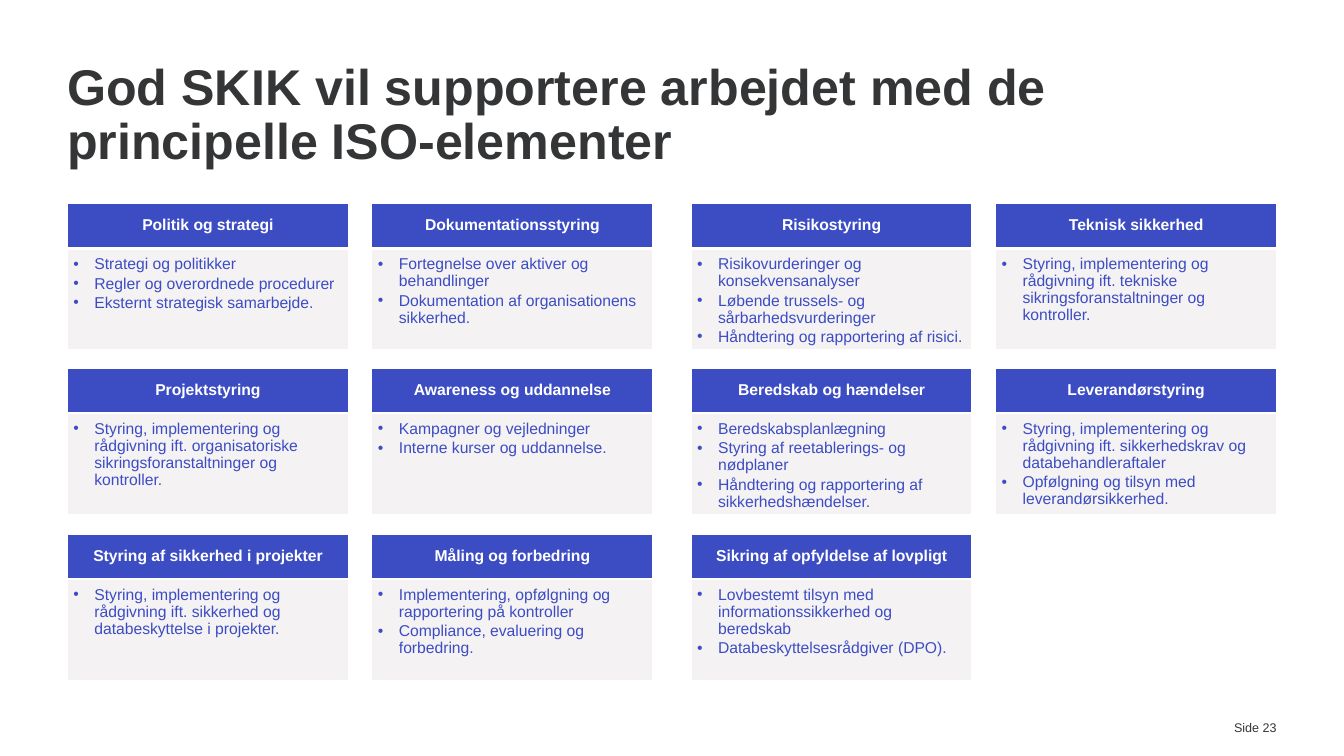
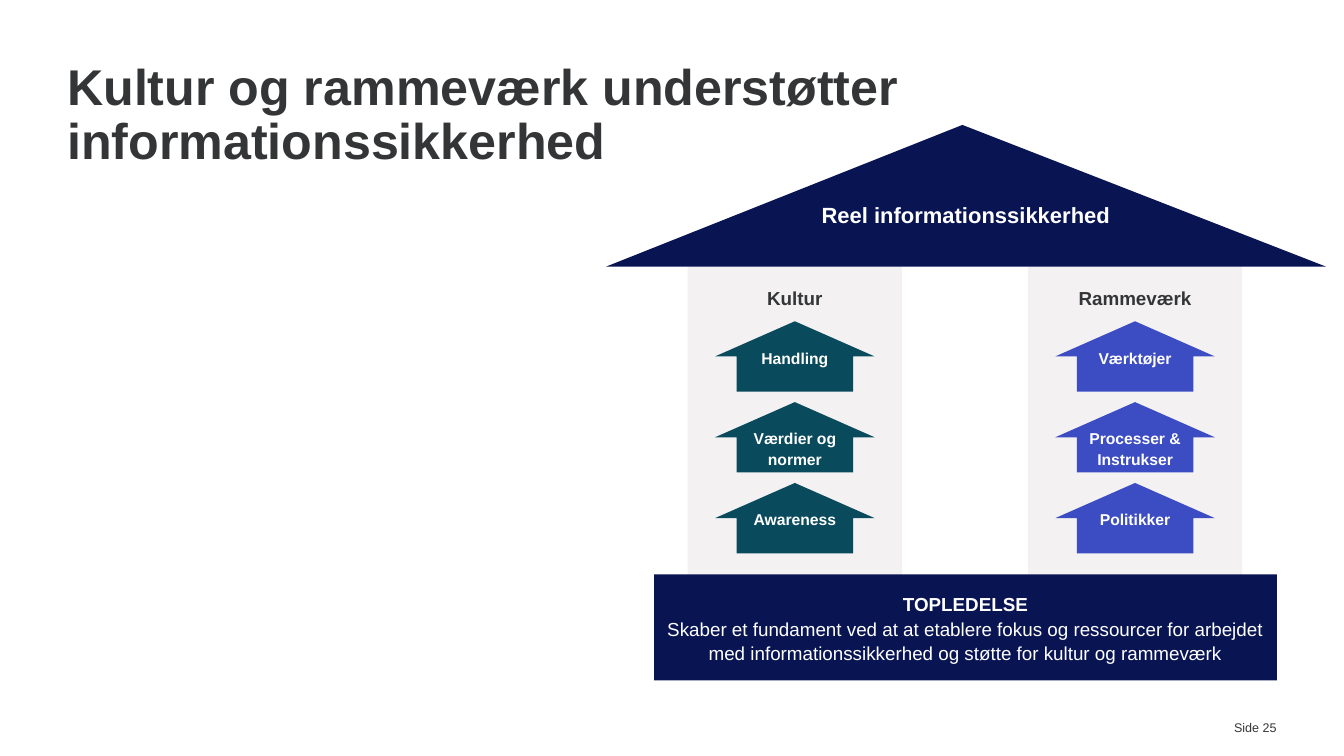
from lxml import etree
from pptx import Presentation
from pptx import util as u
from pptx.dml.color import RGBColor
from pptx.enum import shapes, text
from pptx.oxml import ns

PX = 8500
FONT = "Arial"
INK = RGBColor(0x34, 0x35, 0x36)
SLATE = RGBColor(0x33, 0x35, 0x37)
WHITE = RGBColor(0xFF, 0xFF, 0xFF)
BLUE = RGBColor(0x3C, 0x4D, 0xC4)
NAVY = RGBColor(0x09, 0x14, 0x53)
TEAL = RGBColor(0x09, 0x4A, 0x5C)
GREY = RGBColor(0xF3, 0xF1, 0xF2)

RECTANGLE = shapes.MSO_SHAPE.RECTANGLE
LEFT, CENTER, RIGHT = text.PP_ALIGN.LEFT, text.PP_ALIGN.CENTER, text.PP_ALIGN.RIGHT
TOP, MIDDLE = text.MSO_ANCHOR.TOP, text.MSO_ANCHOR.MIDDLE

TOPICS = [
    ("Politik og strategi", [
        "Strategi og politikker",
        "Regler og overordnede procedurer",
        "Eksternt strategisk samarbejde."]),
    ("Dokumentationsstyring", [
        "Fortegnelse over aktiver og behandlinger",
        "Dokumentation af organisationens sikkerhed."]),
    ("Risikostyring", [
        "Risikovurderinger og konsekvensanalyser",
        "Løbende trussels- og sårbarhedsvurderinger",
        "Håndtering og rapportering af risici."]),
    ("Teknisk sikkerhed", [
        "Styring, implementering og rådgivning ift. tekniske "
        "sikringsforanstaltninger og kontroller."]),
    ("Projektstyring", [
        "Styring, implementering og rådgivning ift. organisatoriske "
        "sikringsforanstaltninger og kontroller."]),
    ("Awareness og uddannelse", [
        "Kampagner og vejledninger",
        "Interne kurser og uddannelse."]),
    ("Beredskab og hændelser", [
        "Beredskabsplanlægning",
        "Styring af reetablerings- og nødplaner",
        "Håndtering og rapportering af sikkerhedshændelser."]),
    ("Leverandørstyring", [
        "Styring, implementering og rådgivning ift. sikkerhedskrav og databehandleraftaler",
        "Opfølgning og tilsyn med leverandørsikkerhed."]),
    ("Styring af sikkerhed i projekter", [
        "Styring, implementering og rådgivning ift. sikkerhed og "
        "databeskyttelse i projekter."]),
    ("Måling og forbedring", [
        "Implementering, opfølgning og rapportering på kontroller",
        "Compliance, evaluering og forbedring."]),
    ("Sikring af opfyldelse af lovpligt", [
        "Lovbestemt tilsyn med informationssikkerhed og beredskab",
        "Databeskyttelsesrådgiver (DPO)."]),
]

PILLARS = [
    ("Kultur", TEAL, ["Handling", "Værdier og normer", "Awareness"]),
    ("Rammeværk", BLUE, ["Værktøjer", "Processer & Instrukser", "Politikker"]),
]


def px(length):
    """Turn whole pixels into EMU."""
    return u.Emu(length * PX)


def set_frame(shape, anchor=TOP, insets=(0, 0, 0, 0)):
    """Set wrapping, anchor and insets (left, top, right, bottom) of a text frame."""
    frame = shape.text_frame
    frame.word_wrap = True
    frame.auto_size = text.MSO_AUTO_SIZE.NONE
    frame.vertical_anchor = anchor
    frame.margin_left, frame.margin_top, frame.margin_right, frame.margin_bottom = map(px, insets)


def write(shape, lines, size, color, bold=False, align=CENTER, spacing=1.0, after=0):
    """Fill a shape with one paragraph per line and return the paragraphs."""
    frame = shape.text_frame
    for index, line in enumerate(lines):
        paragraph = frame.add_paragraph() if index else frame.paragraphs[0]
        paragraph.alignment = align
        paragraph.line_spacing = spacing
        paragraph.space_before = u.Pt(0)
        paragraph.space_after = u.Pt(after)
        run = paragraph.add_run()
        run.text = line
        run.font.name = FONT
        run.font.size = u.Pt(size)
        run.font.bold = bold
        run.font.color.rgb = color
    return list(frame.paragraphs)


def add_block(slide, kind, box, fill, line=None):
    """Add a filled preset shape, outlined only when a line colour is given."""
    shape = slide.shapes.add_shape(kind, *map(px, box))
    shape.shadow.inherit = False
    shape.fill.solid()
    shape.fill.fore_color.rgb = fill
    if line is None:
        shape.line.fill.background()
    else:
        shape.line.color.rgb = line
        shape.line.width = u.Pt(1)
    return shape


def add_label(slide, box, label, size, color, bold=True, align=CENTER):
    """Add a text box without insets."""
    shape = slide.shapes.add_textbox(*map(px, box))
    set_frame(shape)
    write(shape, [label], size, color, bold, align)


def add_bullet(paragraph):
    """Give a paragraph a hanging round bullet."""
    properties = paragraph._p.get_or_add_pPr()
    properties.set("marL", str(px(20)))
    properties.set("indent", str(-px(20)))
    etree.SubElement(properties, ns.qn("a:buFont")).set("typeface", FONT)
    etree.SubElement(properties, ns.qn("a:buChar")).set("char", "•")


def set_opacity(shape, percent):
    """Make the solid fill of a shape partly transparent."""
    color = shape._element.spPr.find(ns.qn("a:solidFill"))[0]
    etree.SubElement(color, ns.qn("a:alpha")).set("val", str(percent * 1000))


def add_slide(presentation, heading, number):
    """Add a slide with the shared title style and page footer."""
    slide = presentation.slides.add_slide(presentation.slide_layouts[5])
    title = slide.shapes.title
    title.left, title.top, title.width, title.height = map(px, (64, 59, 1152, 94))
    set_frame(title)
    write(title, [heading], 32, INK, True, LEFT, 0.9)
    add_label(slide, (1055, 686, 161, 15), f"Side {number}", 8, INK, False, RIGHT)
    return slide


def add_topic(slide, left, top, heading, points):
    """Add a topic card: a blue header over a bulleted body."""
    header = add_block(slide, RECTANGLE, (left, top, 268, 42), BLUE, WHITE)
    set_frame(header, MIDDLE, (8, 4, 8, 4))
    write(header, [heading], 10, WHITE, True, spacing=0.9)
    body = add_block(slide, RECTANGLE, (left, top + 43, 268, 96), GREY, WHITE)
    set_opacity(body, 90)
    set_frame(body, TOP, (6, 7, 6, 10))
    for paragraph in write(body, points, 10, BLUE, align=LEFT, spacing=0.9, after=1.5):
        add_bullet(paragraph)


def add_pillar(slide, left, heading, color, steps):
    """Add a grey pillar with a heading and a stack of upward arrows."""
    add_block(slide, RECTANGLE, (left, 238, 204, 311), GREY)
    add_label(slide, (left, 273, 204, 22), heading, 12, SLATE)
    for index, step in enumerate(steps):
        arrow = add_block(slide, shapes.MSO_SHAPE.UP_ARROW,
                          (left + 26, 306 + 77 * index, 152, 67), color)
        arrow.adjustments[0], arrow.adjustments[1] = 0.73, 0.5
        set_frame(arrow, TOP, (5, 0, 5, 0))
        write(arrow, [step], 10, WHITE, True, spacing=1.08)


def build_topics(presentation):
    """Build the slide with the grid of ISO topics."""
    slide = add_slide(
        presentation, "God SKIK vil supportere arbejdet med de principelle ISO-elementer", 23)
    for index, (heading, points) in enumerate(TOPICS):
        row, column = divmod(index, 4)
        left = 64 + 290 * column + 14 * (column // 2)
        add_topic(slide, left, 194 + 315 * row // 2, heading, points)


def build_temple(presentation):
    """Build the slide with the temple of roof, pillars and base."""
    slide = add_slide(
        presentation, "Kultur og rammeværk understøtter informationssikkerhed", 25)
    for index, (heading, color, steps) in enumerate(PILLARS):
        add_pillar(slide, 655 + 324 * index, heading, color, steps)
    base = add_block(slide, RECTANGLE, (623, 547, 593, 101), NAVY)
    set_frame(base, MIDDLE, (10, 6, 10, 5))
    paragraphs = write(base, [
        "TOPLEDELSE",
        "Skaber et fundament ved at at etablere fokus og ressourcer for arbejdet "
        "med informationssikkerhed og støtte for kultur og rammeværk",
    ], 12, WHITE, spacing=1.08)
    paragraphs[0].runs[0].font.bold = True
    roof = add_block(slide, shapes.MSO_SHAPE.ISOSCELES_TRIANGLE, (577, 119, 686, 135), NAVY)
    roof.adjustments[0] = 0.495
    add_label(slide, (766, 192, 308, 27), "Reel informationssikkerhed", 14, WHITE)


def main():
    """Build and save the presentation."""
    presentation = Presentation()
    presentation.slide_width, presentation.slide_height = px(1280), px(720)
    build_topics(presentation)
    build_temple(presentation)
    presentation.save("out.pptx")


if __name__ == "__main__":
    main()
